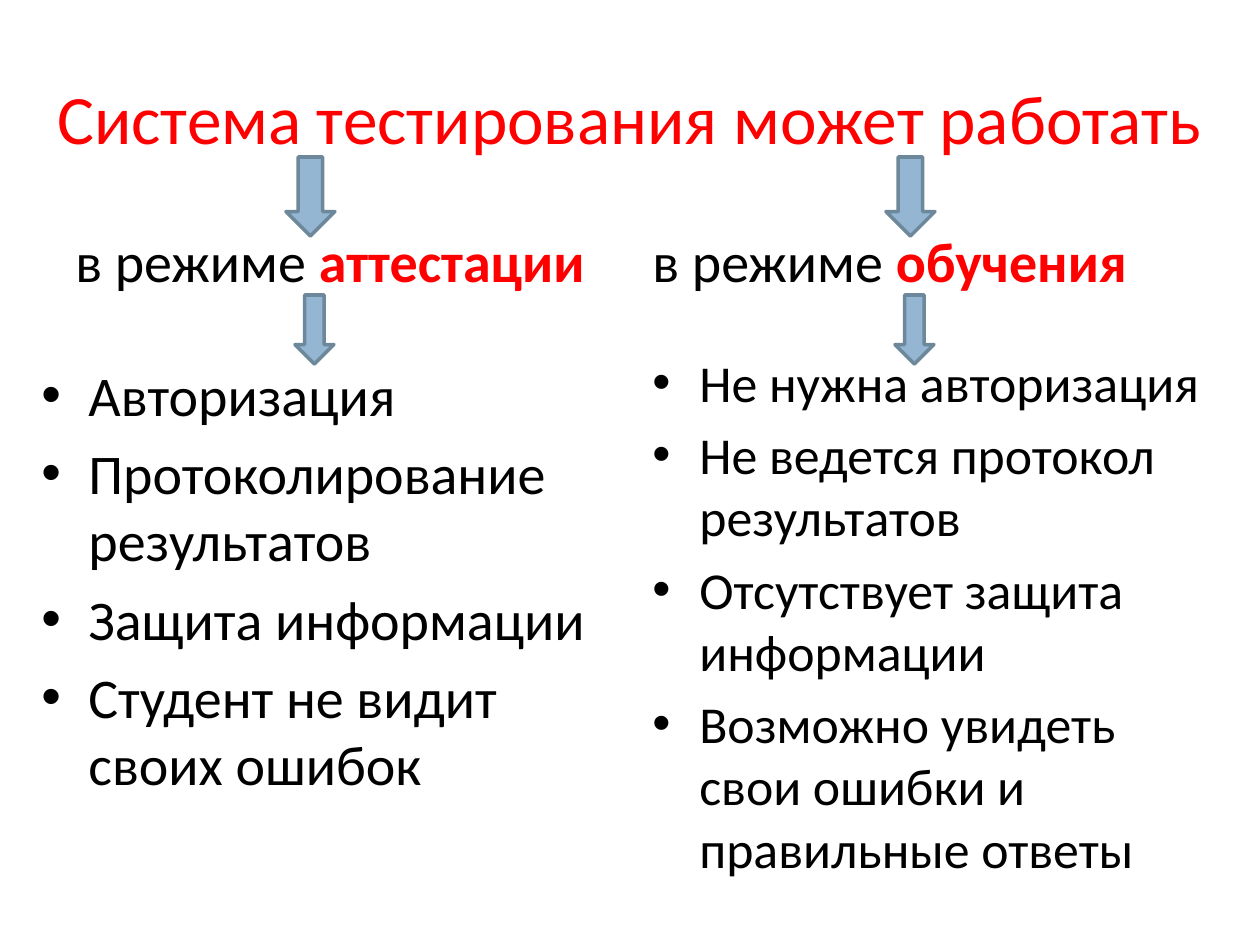
from lxml.etree import SubElement
from pptx import Presentation
from pptx.dml.color import RGBColor
from pptx.enum.shapes import MSO_SHAPE
from pptx.enum.text import MSO_ANCHOR, PP_ALIGN
from pptx.oxml.ns import qn
from pptx.util import Emu, Pt

PX_PER_INCH = 126
COLORS = {
    "text": "000000",
    "accent": "FF0000",
    "arrow": "94B6D2",
    "arrow_line": "6D879B",
}
FONT = "Calibri"
BULLET_INDENT = 47
COLUMN_STEP = 600

MODES = [
    {
        "name": "аттестации",
        "heading_box": (63, 212, 557, 88),
        "list_box": (29, 354, 586, 544),
        "size": 32,
        "features": [
            "Авторизация",
            "Протоколирование результатов",
            "Защита информации",
            "Студент не видит своих ошибок",
        ],
    },
    {
        "name": "обучения",
        "heading_box": (640, 212, 557, 88),
        "list_box": (640, 344, 581, 576),
        "size": 29.6,
        "features": [
            "Не нужна авторизация",
            "Не ведется протокол результатов",
            "Отсутствует защита информации",
            "Возможно увидеть свои ошибки и правильные ответы",
        ],
    },
]


def px(length):
    return Emu(round(length * 914400 / PX_PER_INCH))


def rgb(name):
    return RGBColor.from_string(COLORS[name])


def add_bullet(paragraph):
    properties = paragraph._p.get_or_add_pPr()
    properties.set("marL", str(px(BULLET_INDENT)))
    properties.set("indent", str(-px(BULLET_INDENT)))
    SubElement(properties, qn("a:buFont")).set("typeface", "Arial")
    SubElement(properties, qn("a:buChar")).set("char", "•")


def add_text(slide, box, paragraphs, size=32, align=PP_ALIGN.LEFT,
             anchor=MSO_ANCHOR.TOP, bullets=False, space=0):
    """Each paragraph is a list of (text, color name, bold) runs."""
    frame = slide.shapes.add_textbox(*map(px, box)).text_frame
    frame.word_wrap = True
    frame.vertical_anchor = anchor
    for index, runs in enumerate(paragraphs):
        paragraph = frame.paragraphs[0] if index == 0 else frame.add_paragraph()
        paragraph.alignment = align
        paragraph.space_before = Pt(space)
        if bullets:
            add_bullet(paragraph)
        for text, color, bold in runs:
            run = paragraph.add_run()
            run.text = text
            run.font.name = FONT
            run.font.size = Pt(size)
            run.font.bold = bold
            run.font.color.rgb = rgb(color)


def add_arrow(slide, box):
    arrow = slide.shapes.add_shape(MSO_SHAPE.DOWN_ARROW, *map(px, box))
    arrow.shadow.inherit = False
    arrow.fill.solid()
    arrow.fill.fore_color.rgb = rgb("arrow")
    arrow.line.color.rgb = rgb("arrow_line")
    arrow.line.width = Pt(2)


def add_mode(slide, mode):
    heading = [("в режиме ", "text", False), (mode["name"], "accent", True)]
    add_text(slide, mode["heading_box"], [heading], anchor=MSO_ANCHOR.BOTTOM)
    features = [[(feature, "text", False)] for feature in mode["features"]]
    add_text(slide, mode["list_box"], features, size=mode["size"],
             bullets=True, space=round(mode["size"] * 0.2, 1))


def main():
    deck = Presentation()
    deck.slide_width, deck.slide_height = px(1260), px(945)
    slide = deck.slides.add_slide(deck.slide_layouts[6])

    # Title
    title = [("Система тестирования может работать", "accent", False)]
    add_text(slide, (29, 38, 1201, 157), [title], size=39.6,
             align=PP_ALIGN.CENTER, anchor=MSO_ANCHOR.MIDDLE)

    # Headings and feature lists
    for mode in MODES:
        add_mode(slide, mode)

    # Arrows: title to heading, then heading to list
    for left, top, width, height in [(286, 157, 49, 79), (295, 295, 39, 69)]:
        for column in range(len(MODES)):
            add_arrow(slide, (left + column * COLUMN_STEP, top, width, height))

    deck.save("out.pptx")


if __name__ == "__main__":
    main()
